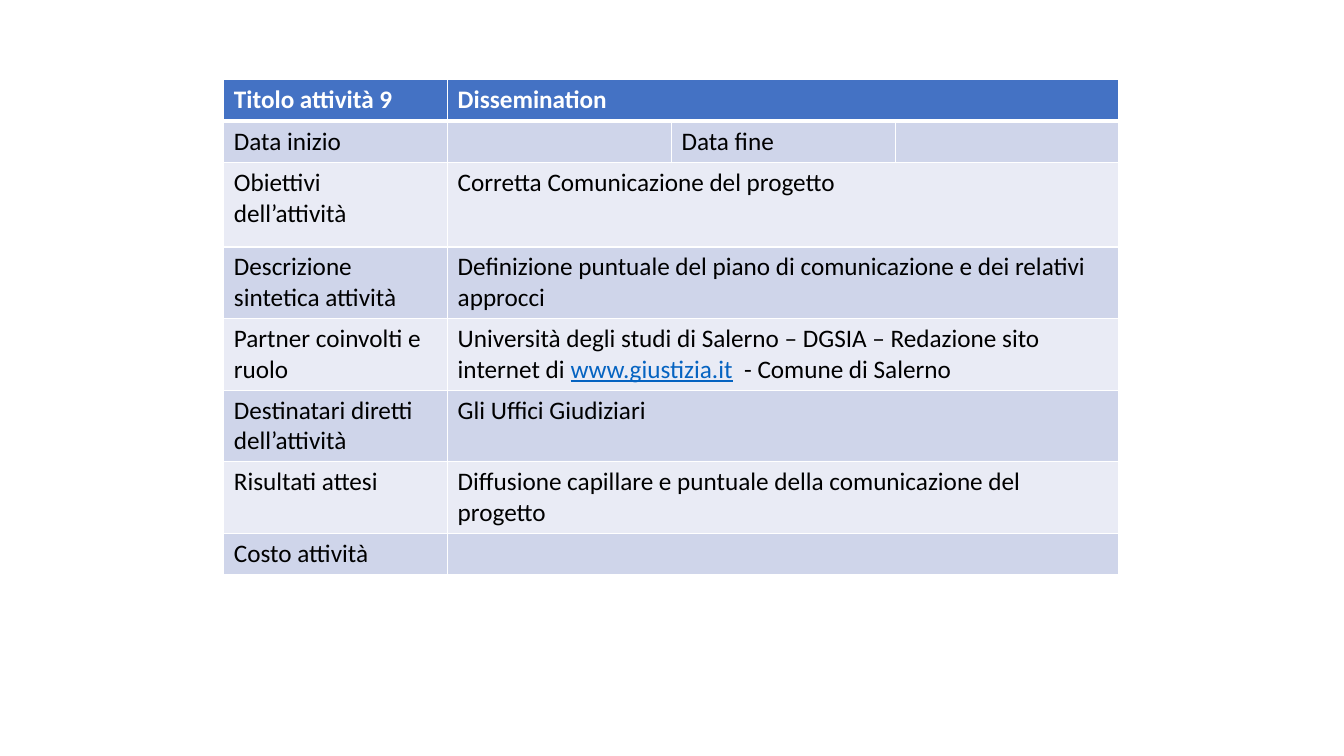
from lxml import etree
from pptx import Presentation
from pptx import util as u
from pptx.dml.color import RGBColor
from pptx.oxml import ns

HEADER, BAND_DARK, BAND_LIGHT = "4472C4", "CFD5EA", "E9EBF5"
WHITE, BLACK, LINK = "FFFFFF", "000000", "0563C1"


def color(value):
    return RGBColor.from_string(value)


class SlideBuilder:
    """Holds the text style and the current slide."""

    font_name = "Calibri"
    font_size = u.Pt(18)

    def __init__(self, slide):
        self.slide = slide

    def table(self, left, top, column_widths, row_heights):
        frame = self.slide.shapes.add_table(
            len(row_heights), len(column_widths), u.Inches(left), u.Inches(top),
            u.Inches(sum(column_widths)), u.Inches(sum(row_heights)))
        table = frame.table
        for column, width in zip(table.columns, column_widths):
            column.width = u.Inches(width)
        for row, height in zip(table.rows, row_heights):
            row.height = u.Inches(height)
        return table

    def borders(self, cell, **widths):
        properties = cell._tc.get_or_add_tcPr()
        for position, side in enumerate("LRTB"):
            line = etree.Element(ns.qn(f"a:ln{side}"), w=str(u.Pt(widths.get(side, 1))))
            fill = etree.SubElement(line, ns.qn("a:solidFill"))
            etree.SubElement(fill, ns.qn("a:srgbClr"), val=WHITE)
            properties.insert(position, line)

    def cell(self, cell, fill, **widths):
        cell.fill.solid()
        cell.fill.fore_color.rgb = color(fill)
        self.borders(cell, **widths)

    def text(self, cell, runs, font_color=BLACK, bold=False):
        paragraph = cell.text_frame.paragraphs[0]
        for content in runs:
            is_link = content.startswith("www.")
            run = paragraph.add_run()
            run.text = content
            run.font.name = self.font_name
            run.font.size = self.font_size
            run.font.bold = bold
            run.font.underline = is_link
            run.font.color.rgb = color(LINK if is_link else font_color)


# Each row: its height, then the runs of each cell
ACTIVITY_ROWS = [
    (0.41, [["Titolo attività 9"], ["Dissemination"]]),
    (0.41, [["Data inizio"], [], ["Data fine"], []]),
    (0.84, [["Obiettivi dell’attività"], ["Corretta Comunicazione del progetto"]]),
    (0.71, [["Descrizione sintetica attività"],
            ["Definizione puntuale del piano di comunicazione e dei relativi approcci"]]),
    (0.71, [["Partner coinvolti e ruolo"],
            ["Università degli studi di Salerno – DGSIA – Redazione sito internet di ",
             "www.giustizia.it", "  - Comune di Salerno"]]),
    (0.71, [["Destinatari diretti dell’attività"], ["Gli Uffici Giudiziari"]]),
    (0.71, [["Risultati attesi"],
            ["Diffusione capillare e puntuale della comunicazione del progetto"]]),
    (0.41, [["Costo attività"], []]),
]


def main():
    presentation = Presentation()
    presentation.slide_width = u.Inches(13.33)
    presentation.slide_height = u.Inches(7.5)
    builder = SlideBuilder(presentation.slides.add_slide(presentation.slide_layouts[6]))

    # Activity table
    table = builder.table(2.22, 0.79, [2.22] * 4, [height for height, _ in ACTIVITY_ROWS])
    for index, (_, contents) in enumerate(ACTIVITY_ROWS):
        is_header = index == 0
        fill = HEADER if is_header else BAND_DARK if index % 2 else BAND_LIGHT
        edges = {"B": 3} if is_header else {"T": 3} if index == 1 else {}
        for column in range(4):
            builder.cell(table.cell(index, column), fill, **edges)

        # Two-part rows span the last three columns
        if len(contents) == 2:
            table.cell(index, 1).merge(table.cell(index, 3))
        for column, runs in enumerate(contents):
            builder.text(table.cell(index, column), runs,
                         WHITE if is_header else BLACK, is_header)

    presentation.save("out.pptx")


if __name__ == "__main__":
    main()
